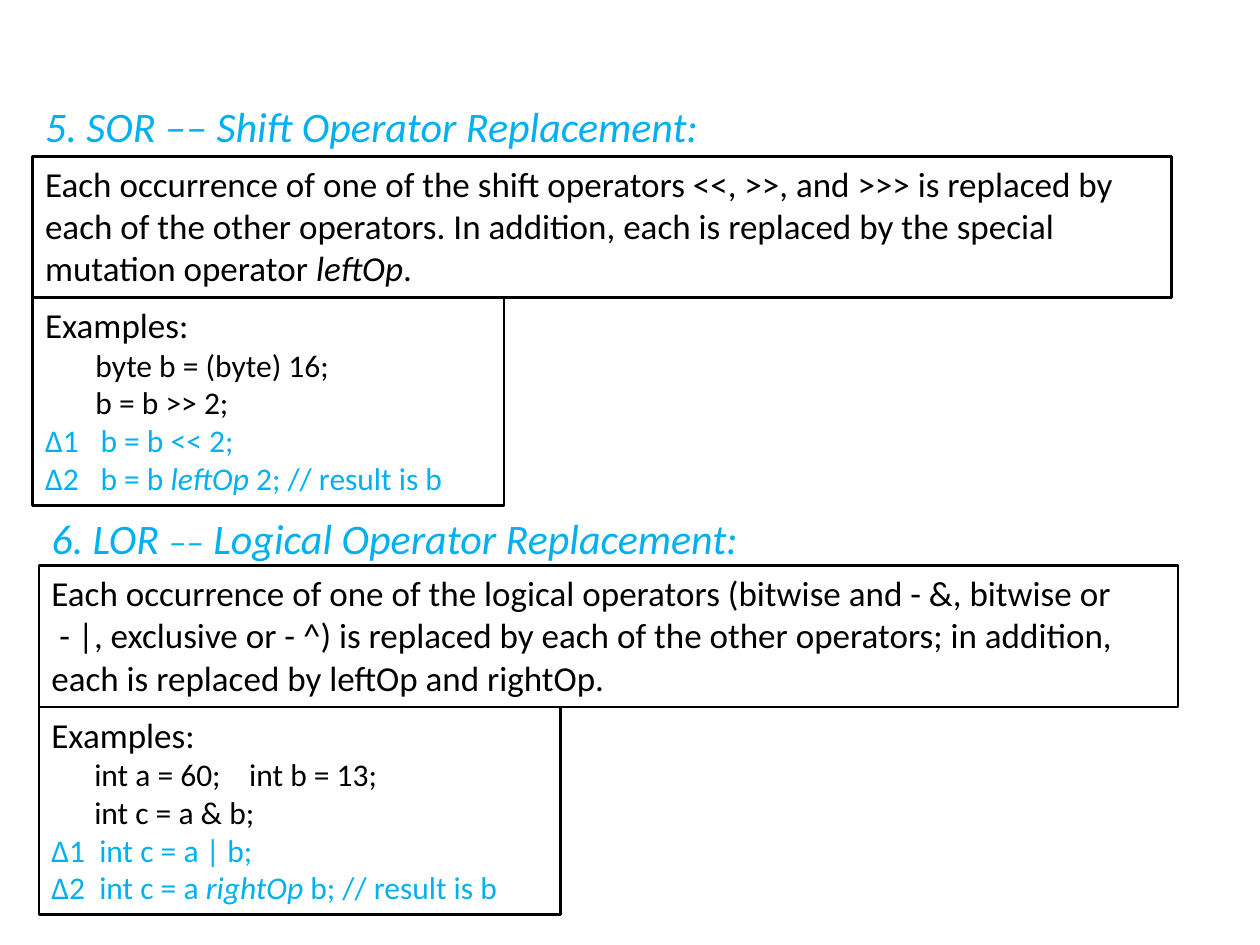
from pptx import Presentation
from pptx.dml.color import RGBColor as RGB
from pptx.enum.shapes import MSO_SHAPE as Shape
from pptx.enum.text import MSO_ANCHOR as Anchor, PP_ALIGN as Align
from pptx.util import Inches, Pt

COLORS = {"ink": "000000", "accent": "00B0F0"}
HEADING, BODY, CODE = 24, 20, 18


class OperatorSlide:
    font = "Calibri"
    border = 1.5

    def __init__(self, slide):
        self.slide = slide

    def line(self, frame, runs, size, color="ink", start=0, margin=None):
        """Add a paragraph of (text, italic[, size]) runs.

        The first line begins at start; a tab in it, and later lines, go to margin.
        """
        first = frame.paragraphs[0]
        paragraph = frame.add_paragraph() if first.runs else first
        paragraph.alignment = Align.LEFT
        margin = start if margin is None else margin
        if start or margin:
            properties = paragraph._p.get_or_add_pPr()
            properties.set("marL", str(Inches(margin)))
            properties.set("indent", str(Inches(start - margin)))
        for text, italic, *own_size in runs:
            run = paragraph.add_run()
            run.text = text
            font = run.font
            font.name, font.italic = self.font, italic
            font.size = Pt(own_size[0] if own_size else size)
            font.color.rgb = RGB.from_string(COLORS[color])

    def heading(self, left, top, width, height, runs):
        box = self.slide.shapes.add_textbox(*map(Inches, (left, top, width, height)))
        box.text_frame.word_wrap = True
        self.line(box.text_frame, runs, HEADING, "accent")

    def framed_box(self, left, top, width, height):
        box = self.slide.shapes.add_shape(
            Shape.RECTANGLE, *map(Inches, (left, top, width, height)))
        box.shadow.inherit = False
        box.fill.background()
        box.line.color.rgb = RGB.from_string(COLORS["ink"])
        box.line.width = Pt(self.border)
        box.text_frame.word_wrap = True
        box.text_frame.vertical_anchor = Anchor.TOP
        return box.text_frame

    def rule(self, left, top, paragraphs):
        frame = self.framed_box(left, top, 9.04, 1.12)
        for runs in paragraphs:
            self.line(frame, runs, BODY)

    def examples(self, left, top, width, code, code_start, mutants, mutant_start):
        """Add the code lines, then the mutants numbered with a delta.

        Each code line is (text, margin), the margin being where its tab leads.
        """
        frame = self.framed_box(left, top, width, 1.65)
        self.line(frame, [("Examples:", False)], BODY)
        for text, margin in code:
            self.line(frame, [(text, False)], CODE, start=code_start, margin=margin)
        for number, runs in enumerate(mutants, 1):
            self.line(frame, [(f"∆{number}\t", False), *runs], CODE, "accent",
                      margin=mutant_start)


def main():
    deck = Presentation()
    deck.slide_width, deck.slide_height = Inches(10), Inches(7.5)
    page = OperatorSlide(deck.slides.add_slide(deck.slide_layouts[6]))

    shift_left, logical_left = 0.26, 0.31

    page.heading(shift_left, 0.75, 8.65, 0.59,
                 [("5. SOR –– Shift Operator Replacement:", True)])
    page.rule(shift_left, 1.24, [[
        ("Each occurrence of one of the shift operators <<, >>, and >>> is replaced by "
         "each of the other operators. In addition, each is replaced by the special "
         "mutation operator ", False),
        ("leftOp", True), (".", False)]])
    page.examples(
        shift_left, 2.36, 3.74,
        [("byte b = (byte) 16;", None), ("b = b >> 2;", None)], 0.4,
        [[("b = b << 2;", False)],
         [("b = b ", False), ("leftOp", True), (" 2; // result is b", False)]], 0.44)

    page.heading(logical_left, 4.02, 7.67, 0.5,
                 [("6. LOR ", True), ("––", True, BODY),
                  (" Logical Operator Replacement:", True)])
    page.rule(logical_left, 4.49, [
        [("Each occurrence of one of the logical operators (bitwise and - &, bitwise or",
          False)],
        [(" - |, exclusive or - ^) is replaced by each of the other operators; "
          "in addition, each is replaced by leftOp and rightOp.", False)]])
    page.examples(
        logical_left, 5.61, 4.14,
        [("int a = 60;\tint b = 13;", 1.57), ("int c = a & b;", None)], 0.34,
        [[("int c = a | b;", False)],
         [("int c = a ", False), ("rightOp", True), (" b; // result is b", False)]], 0.38)

    deck.save("out.pptx")


if __name__ == "__main__":
    main()
